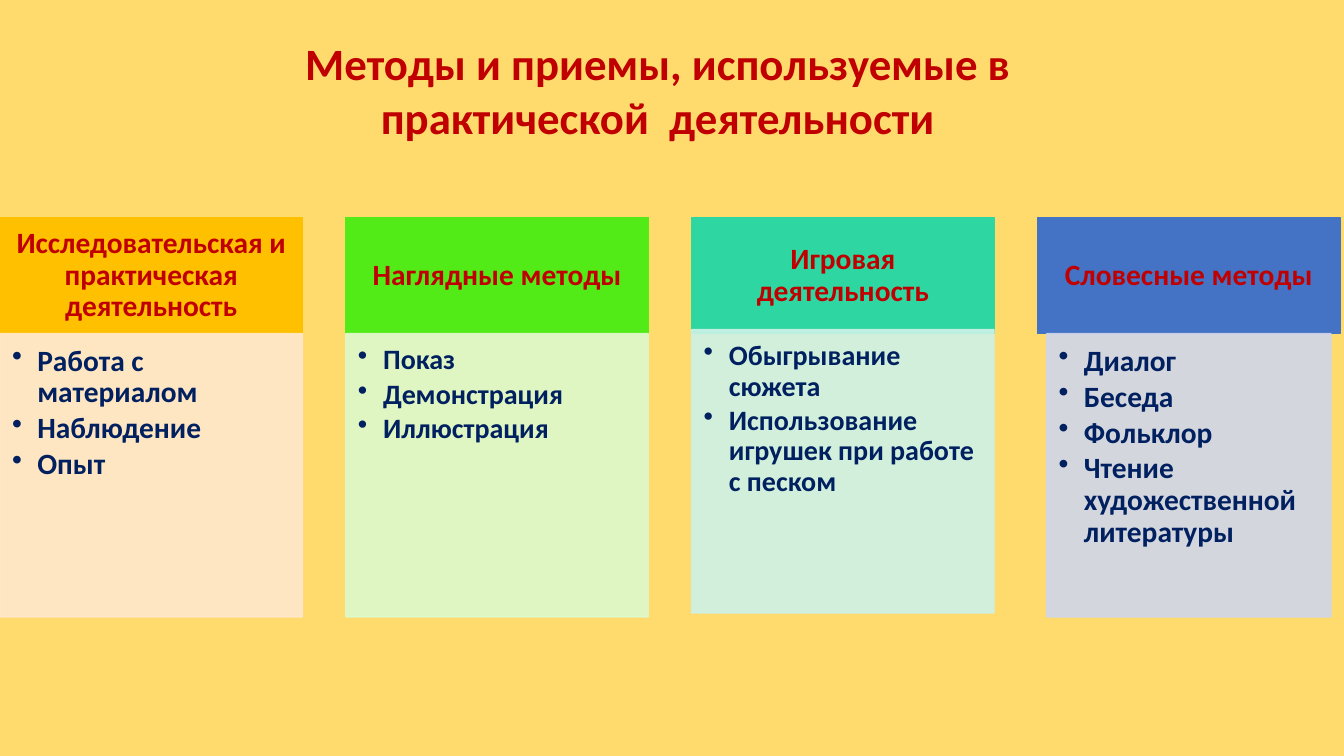
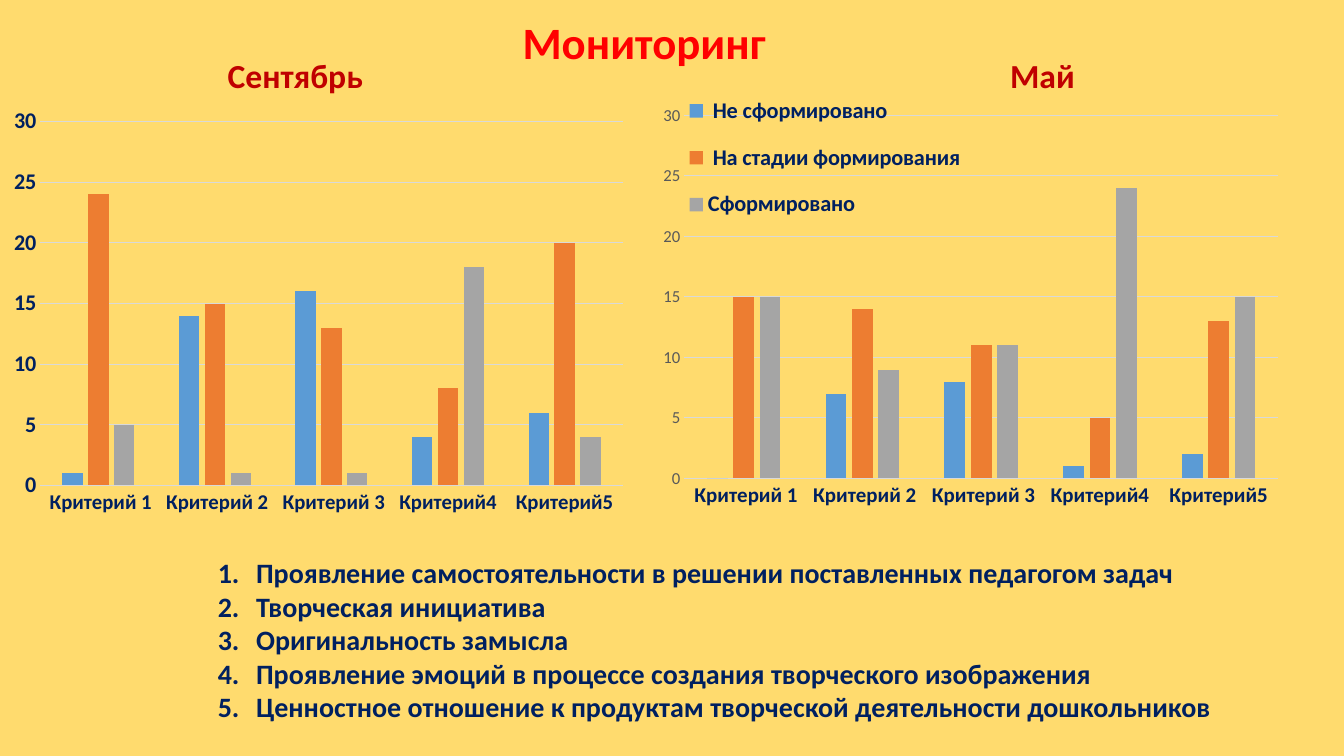
from dataclasses import dataclass

from lxml.etree import SubElement
from pptx import Presentation
from pptx.chart.data import CategoryChartData
from pptx.dml.color import RGBColor
from pptx.enum.chart import XL_CHART_TYPE, XL_LEGEND_POSITION, XL_TICK_MARK
from pptx.enum.shapes import MSO_SHAPE
from pptx.enum.text import MSO_ANCHOR, MSO_AUTO_SIZE, PP_ALIGN
from pptx.oxml import parse_xml
from pptx.oxml.ns import nsdecls, qn
from pptx.util import Inches, Pt


@dataclass(frozen=True)
class Theme:
    """Colours and type sizes shared by the slides."""

    font: str = "Calibri"
    background: str = "FFDB6E"
    heading: str = "C00000"
    accent: str = "FF0000"
    text: str = "002060"
    muted: str = "595959"
    grid: str = "D9D9D9"
    series: tuple = ("5B9BD5", "ED7D31", "A5A5A5")
    title_size: float = 32
    subtitle_size: float = 24
    card_size: float = 21
    list_size: float = 20
    axis_size: float = 16
    label_size: float = 15
    small_size: float = 12


@dataclass(frozen=True)
class Card:
    """One method: header, list and its colours, with small list adjustments."""

    header: str
    items: tuple
    header_fill: str
    list_fill: str
    size: float = 21
    inset: float = 0
    lift: float = 0


THEME = Theme()

CARDS = (
    Card("Исследовательская и практическая деятельность",
         ("Работа с материалом", "Наблюдение", "Опыт"), "FFC000", "FFE8CC"),
    Card("Наглядные методы", ("Показ", "Демонстрация", "Иллюстрация"),
         "53EB17", "DDF9CC", size=20),
    Card("Игровая деятельность",
         ("Обыгрывание сюжета", "Использование игрушек при работе с песком"),
         "2ED7A1", "CDF2E7", size=20, lift=0.04),
    Card("Словесные методы",
         ("Диалог", "Беседа", "Фольклор", "Чтение художественной литературы"),
         "4472C4", "CFD6EA", inset=0.09),
)

CATEGORIES = (" Критерий 1", " Критерий 2", " Критерий 3", "Критерий4", "Критерий5")
LEVELS = (" Не сформировано", " На стадии формирования", "Сформировано")
SEPTEMBER = ((1, 14, 16, 4, 6), (24, 15, 13, 8, 20), (5, 1, 1, 18, 4))
MAY = ((0, 7, 8, 1, 2), (15, 14, 11, 5, 13), (15, 9, 11, 24, 15))
CRITERIA = (
    "Проявление самостоятельности в решении поставленных педагогом задач",
    "Творческая инициатива",
    "Оригинальность замысла",
    "Проявление эмоций в процессе создания творческого изображения",
    "Ценностное отношение к продуктам творческой деятельности дошкольников",
)


def style_font(font, size, color, bold=True):
    """Apply the deck's typeface with the given size and colour."""
    font.name, font.size, font.bold = THEME.font, Pt(size), bold
    font.color.rgb = RGBColor.from_string(color)


def place(shape, left, top, width, height):
    """Move a shape to a box given in inches."""
    shape.left, shape.top = Inches(left), Inches(top)
    shape.width, shape.height = Inches(width), Inches(height)


def add_title(page, text, color, box):
    """Fill and position the title placeholder."""
    title = page.shapes.title
    place(title, *box)
    frame = title.text_frame
    frame.text = text
    frame.auto_size = MSO_AUTO_SIZE.NONE
    frame.vertical_anchor = MSO_ANCHOR.MIDDLE
    para = frame.paragraphs[0]
    para.alignment = PP_ALIGN.CENTER
    style_font(para.font, THEME.title_size, color)


def fill_list(frame, items, size, indent, marker, **attributes):
    """Write items as a list with hanging markers."""
    frame.text = "\n".join(items)
    for para in frame.paragraphs:
        para.alignment = PP_ALIGN.LEFT
        para.space_before = Pt(0)
        properties = para._p.get_or_add_pPr()
        properties.set("marL", str(Inches(indent)))
        properties.set("indent", str(-Inches(indent)))
        SubElement(properties, qn(marker), attributes)
        style_font(para.font, size, THEME.text)


def add_panel(page, box, color, margins, opacity=100):
    """Add a filled rectangle and return its text frame."""
    panel = page.shapes.add_shape(MSO_SHAPE.RECTANGLE, *map(Inches, box))
    panel.shadow.inherit = False
    panel.fill.solid()
    panel.line.width = Pt(1)
    for paint in (panel.fill.fore_color, panel.line.color):
        paint.rgb = RGBColor.from_string(color)
    if opacity < 100:
        for paint in panel._element.spPr.iter(qn("a:srgbClr")):
            SubElement(paint, qn("a:alpha"), val=str(opacity * 1000))
    frame = panel.text_frame
    frame.word_wrap = True
    (frame.margin_left, frame.margin_top,
     frame.margin_right, frame.margin_bottom) = map(Inches, margins)
    return frame


def add_card(page, card, left, top, width):
    """Add a method header with its list below."""
    header_height, list_height = 1.15, 2.81
    header = add_panel(page, (left, top, width, header_height),
                       card.header_fill, (0.16, 0.09, 0.16, 0.09))
    header.vertical_anchor = MSO_ANCHOR.MIDDLE
    header.text = card.header
    para = header.paragraphs[0]
    para.alignment = PP_ALIGN.CENTER
    para.line_spacing = 0.9
    style_font(para.font, THEME.card_size, THEME.heading)

    box = (left + card.inset, top + header_height - card.lift,
           width - 2 * card.inset, list_height)
    body = add_panel(page, box, card.list_fill, (0.12, 0.12, 0.16, 0.18), 90)
    body.vertical_anchor = MSO_ANCHOR.TOP
    fill_list(body, card.items, card.size, 0.25, "a:buChar", char="•")
    for para in body.paragraphs:
        para.line_spacing = 0.9
        para.space_after = Pt(3)


def add_month(page, text, left, width):
    """Add the heading above a chart."""
    box = page.shapes.add_textbox(Inches(left), Inches(0.5), Inches(width), Inches(0.5))
    box.text_frame.word_wrap = True
    box.text_frame.text = text
    style_font(box.text_frame.paragraphs[0].font, THEME.subtitle_size, THEME.heading)


def set_layout(element, x, y, w, h, inner=False):
    """Fix the position of a chart part as fractions of the chart."""
    for old in element.findall(qn("c:layout")):
        element.remove(old)
    target = '<c:layoutTarget val="inner"/>' if inner else ""
    values = "".join(f'<c:{name} val="{value}"/>'
                     for name, value in zip("xywh", (x, y, w, h)))
    layout = parse_xml(
        f'<c:layout {nsdecls("c")}><c:manualLayout>{target}'
        f'<c:xMode val="edge"/><c:yMode val="edge"/>{values}'
        '</c:manualLayout></c:layout>')
    position = element.find(qn("c:legendPos"))
    if position is None:
        element.insert(0, layout)
    else:
        position.addnext(layout)


def add_columns(page, box, values, axis_font):
    """Add a clustered column chart of the criteria."""
    data = CategoryChartData()
    data.categories = CATEGORIES
    for name, numbers in zip(LEVELS, values):
        data.add_series(name, numbers)
    chart = page.shapes.add_chart(
        XL_CHART_TYPE.COLUMN_CLUSTERED, *map(Inches, box), data).chart
    chart.has_title = chart.has_legend = False
    style_font(chart.font, THEME.label_size, THEME.text)
    plot = chart.plots[0]
    plot.vary_by_categories = False
    plot.gap_width, plot.overlap = 219, -27
    for series, color in zip(plot.series, THEME.series):
        series.format.fill.solid()
        series.format.fill.fore_color.rgb = RGBColor.from_string(color)

    categories, scale = chart.category_axis, chart.value_axis
    scale.minimum_scale, scale.maximum_scale, scale.major_unit = 0, 30, 5
    for axis in (categories, scale):
        axis.major_tick_mark = axis.minor_tick_mark = XL_TICK_MARK.NONE
    for rule in (categories.format.line, scale.major_gridlines.format.line):
        rule.color.rgb = RGBColor.from_string(THEME.grid)
        rule.width = Pt(0.75)
    scale.format.line.fill.background()
    style_font(categories.tick_labels.font, THEME.label_size, THEME.text)
    style_font(scale.tick_labels.font, *axis_font)
    set_layout(chart._chartSpace.chart.plotArea, 0.03, 0.11, 0.95, 0.77, inner=True)
    return chart


def add_legend(chart):
    """Add the legend over the upper left of the chart."""
    chart.has_legend = True
    legend = chart.legend
    legend.position = XL_LEGEND_POSITION.LEFT
    legend.include_in_layout = True
    style_font(legend.font, THEME.axis_size, THEME.text)
    set_layout(legend._element, 0.02, 0.03, 0.47, 0.34)


def build_methods(deck):
    """Build the slide of methods in four cards."""
    page = deck.slides.add_slide(deck.slide_layouts.get_by_name("Title Only"))
    add_title(page, "Методы и приемы, используемые в практической  деятельности",
              THEME.heading, (2.54, 0.3, 7.97, 1.18))
    width, gap = 3, 0.43
    for index, card in enumerate(CARDS):
        add_card(page, card, index * (width + gap), 2.16, width)


def build_monitoring(deck):
    """Build the slide that compares two months."""
    page = deck.slides.add_slide(deck.slide_layouts.get_by_name("Title and Content"))
    add_title(page, "Мониторинг", THEME.accent, (4.9, 0.1, 2.98, 0.62))
    add_month(page, "Сентябрь", 2.16, 3.66)
    add_month(page, "Май", 9.92, 2.76)
    add_columns(page, (0.14, 0.69, 6.16, 4.69), SEPTEMBER,
                (THEME.axis_size, THEME.text))
    may = add_columns(page, (6.58, 0.63, 6.22, 4.68), MAY,
                      (THEME.small_size, THEME.muted, False))
    add_legend(may)
    criteria = page.placeholders[1]
    place(criteria, 2.06, 5.46, 10.35, 1.78)
    criteria.text_frame.auto_size = MSO_AUTO_SIZE.NONE
    fill_list(criteria.text_frame, CRITERIA, THEME.list_size, 0.38,
              "a:buAutoNum", type="arabicPeriod")


def main():
    """Build and save the deck."""
    deck = Presentation()
    deck.slide_width, deck.slide_height = Inches(13.33), Inches(7.5)
    fill = deck.slide_master.background.fill
    fill.solid()
    fill.fore_color.rgb = RGBColor.from_string(THEME.background)
    build_methods(deck)
    build_monitoring(deck)
    deck.save("out.pptx")


if __name__ == "__main__":
    main()
